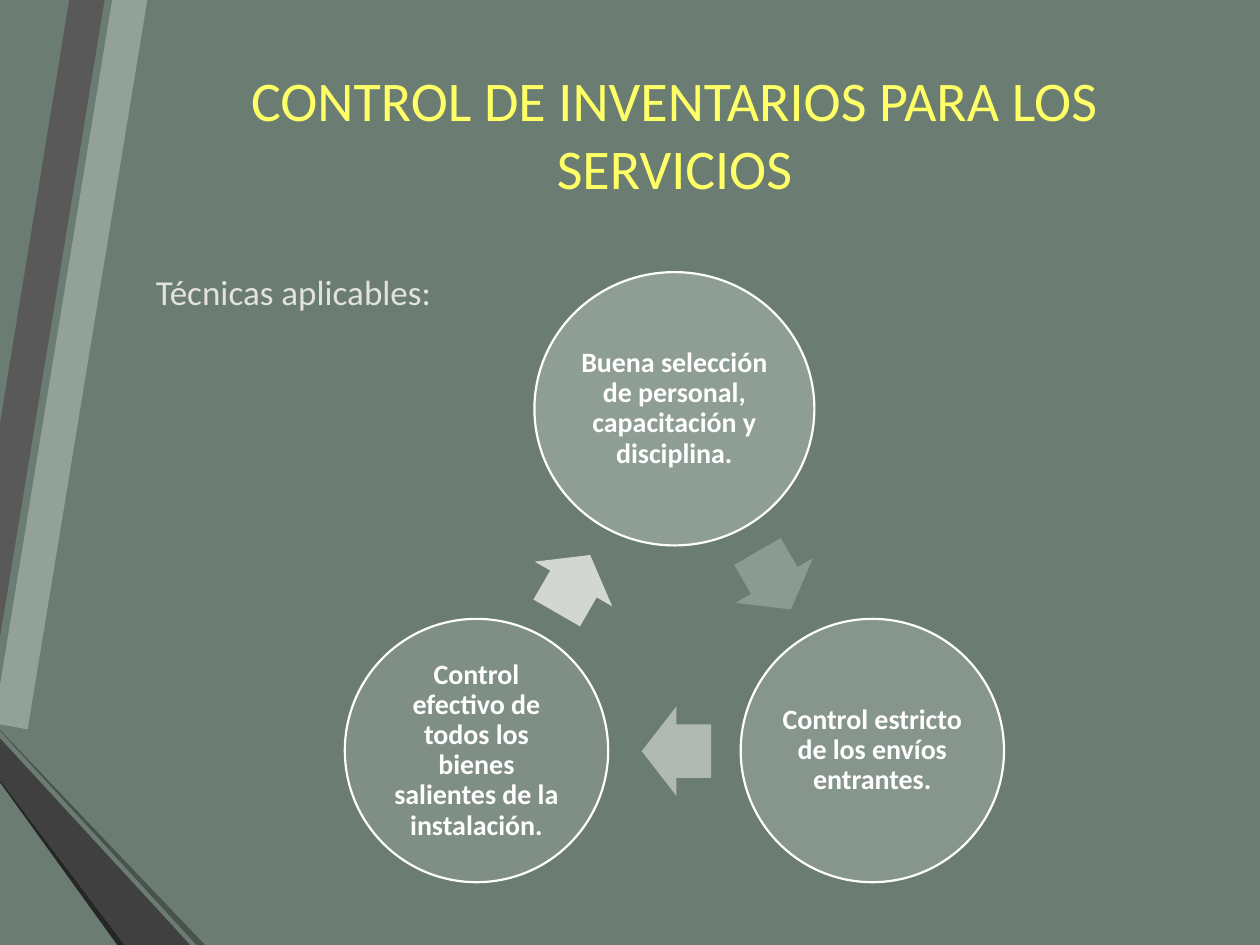
from dataclasses import dataclass

from lxml import etree
from pptx import Presentation
from pptx.dml.color import RGBColor
from pptx.enum.shapes import MSO_SHAPE
from pptx.enum.text import MSO_ANCHOR, MSO_AUTO_SIZE, PP_ALIGN
from pptx.oxml.ns import qn
from pptx.util import Pt

ELLIPSE, ARROW = MSO_SHAPE.OVAL, MSO_SHAPE.RIGHT_ARROW
MIDDLE, TOP = MSO_ANCHOR.MIDDLE, MSO_ANCHOR.TOP
CENTER, LEFT = PP_ALIGN.CENTER, PP_ALIGN.LEFT
NO_FIT = MSO_AUTO_SIZE.NONE
TITLE_ONLY = 5


@dataclass(frozen=True)
class Theme:
    font: str = "Calibri"
    background: str = "6B7D72"
    accent: str = "93A299"
    title: str = "FFFF66"
    label: str = "E4E1E3"
    white: str = "FFFFFF"
    title_size: float = 32
    label_size: float = 20
    circle_size: float = 16
    outline: float = 1.25


@dataclass(frozen=True)
class Ribbon:
    color: str
    points: tuple


@dataclass(frozen=True)
class Circle:
    text: str
    center_x: float
    center_y: float
    width: float
    height: float
    opacity: int


@dataclass(frozen=True)
class Arrow:
    center_x: float
    center_y: float
    length: float
    rotation: float
    color: str


THEME = Theme()
AXIS = 385.4       # vertical axis of the cycle
SIDE = 113.1       # distance of the lower circles from the axis
LOWER_Y = 428.9
ARROW_HEIGHT = 51.1

RIBBONS = (
    Ribbon(THEME.accent, ((0, 391.7), (0, 414), (15.8, 416.9), (84.2, 0), (64.1, 0))),
    Ribbon("595959", ((59.8, 0), (39.6, 0), (0, 241.9), (0, 364.3))),
    Ribbon("262626", ((0, 445.7), (0, 447.1), (67, 540), (71.3, 540))),
    Ribbon("47534C", ((0, 416.9), (0, 417.6), (112.3, 540), (117.4, 540))),
    Ribbon(THEME.background,
           ((0, 416.9), (117.4, 540), (167.8, 540), (15.8, 416.9), (0, 414))),
    Ribbon("404040", ((0, 445.7), (71.3, 540), (108.7, 540), (0, 421.9))),
)
CIRCLES = (
    Circle("Buena selección de personal, capacitación y disciplina.",
           AXIS, 233.6, 160, 156.2, 90),
    Circle("Control estricto de los envíos entrantes.",
           AXIS + SIDE, LOWER_Y, 150.5, 150.5, 70),
    Circle("Control efectivo de todos los bienes salientes de la instalación.",
           AXIS - SIDE, LOWER_Y, 150.5, 150.5, 50),
)
ARROWS = (
    Arrow(442.4, 331.7, 38.2, 60, "8C9B92"),
    Arrow(386.5, 429.2, 39.6, 180, "B0B9B3"),
    Arrow(327.7, 333.7, 38.2, 300, "D3D7D4"),
)


def apply(target, values: dict) -> None:
    for name, value in values.items():
        setattr(target, name, value)


def paint(shape, color: str) -> None:
    """Solid fill with neither outline nor shadow."""
    shape.shadow.inherit = False
    shape.fill.solid()
    shape.fill.fore_color.rgb = RGBColor.from_string(color)
    shape.line.fill.background()


def write(shape, text: str, size: float, color: str, frame_format: dict,
          align=CENTER, bold: bool = False, spacing: float = 1) -> None:
    frame = shape.text_frame
    apply(frame, frame_format)
    para = frame.paragraphs[0]
    apply(para, {"alignment": align, "line_spacing": spacing})
    span = para.add_run()
    span.text = text
    apply(span.font, {"name": THEME.font, "size": Pt(size), "bold": bold})
    span.font.color.rgb = RGBColor.from_string(color)


def draw_ribbon(page, ribbon: Ribbon) -> None:
    start, *rest = [(Pt(x), Pt(y)) for x, y in ribbon.points]
    builder = page.shapes.build_freeform(*start)
    builder.add_line_segments(rest, close=True)
    paint(builder.convert_to_shape(), ribbon.color)


def add_centered(page, kind, center_x: float, center_y: float,
                 width: float, height: float):
    return page.shapes.add_shape(kind, Pt(center_x - width / 2), Pt(center_y - height / 2),
                                 Pt(width), Pt(height))


def draw_circle(page, circle: Circle) -> None:
    shape = add_centered(page, ELLIPSE, circle.center_x, circle.center_y,
                         circle.width, circle.height)
    paint(shape, THEME.accent)
    color = shape.fill._xPr.find(qn("a:solidFill"))[0]
    etree.SubElement(color, qn("a:alpha")).set("val", str(circle.opacity * 1000))
    shape.line.color.rgb = RGBColor.from_string(THEME.white)
    shape.line.width = Pt(THEME.outline)
    margins = {f"margin_{side}": Pt(1.6) for side in ("left", "top", "right", "bottom")}
    write(shape, circle.text, THEME.circle_size, THEME.white,
          {"word_wrap": True, "vertical_anchor": MIDDLE, **margins},
          bold=True, spacing=0.9)


def draw_arrow(page, arrow: Arrow) -> None:
    shape = add_centered(page, ARROW, arrow.center_x, arrow.center_y,
                         arrow.length, ARROW_HEIGHT)
    shape.adjustments[0], shape.adjustments[1] = 0.6, 0.5
    shape.rotation = arrow.rotation
    paint(shape, arrow.color)


def main() -> None:
    deck = Presentation()
    apply(deck, {"slide_width": Pt(720), "slide_height": Pt(540)})
    page = deck.slides.add_slide(deck.slide_layouts[TITLE_ONLY])
    page.background.fill.solid()
    page.background.fill.fore_color.rgb = RGBColor.from_string(THEME.background)

    # Decorative ribbons on the left edge
    for ribbon in RIBBONS:
        draw_ribbon(page, ribbon)

    # Title
    title = page.shapes.title
    apply(title, {"left": Pt(82), "top": Pt(9.4), "width": Pt(607), "height": Pt(133.2)})
    write(title, "CONTROL DE INVENTARIOS PARA LOS SERVICIOS", THEME.title_size, THEME.title,
          {"word_wrap": True, "vertical_anchor": MIDDLE, "auto_size": NO_FIT})

    # Cycle of techniques
    for circle in CIRCLES:
        draw_circle(page, circle)
    for arrow in ARROWS:
        draw_arrow(page, arrow)

    # Label
    label = page.shapes.add_textbox(Pt(82), Pt(151.2), Pt(177), Pt(31.5))
    write(label, "Técnicas aplicables:", THEME.label_size, THEME.label,
          {"word_wrap": False, "vertical_anchor": TOP}, align=LEFT)

    deck.save("out.pptx")


if __name__ == "__main__":
    main()
